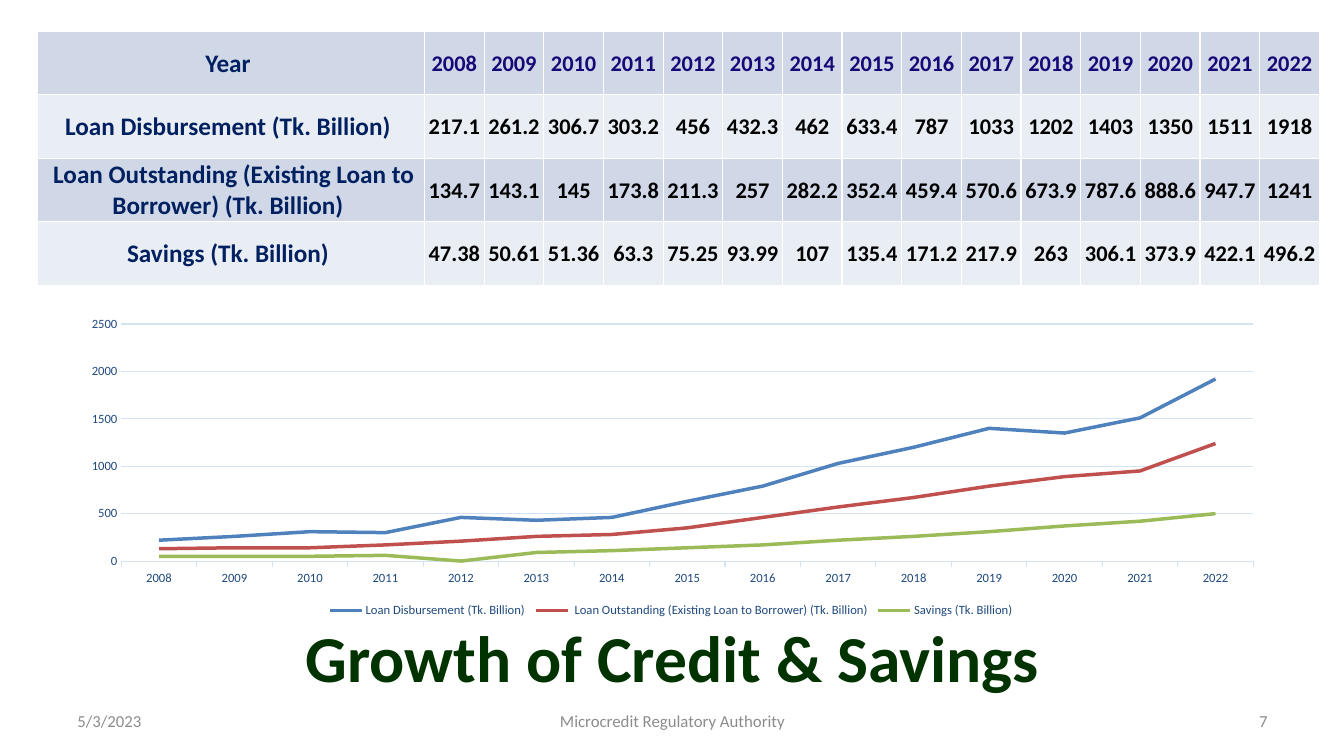
from lxml import etree
from pptx import Presentation
from pptx import util as u
from pptx.chart import data as chart_data
from pptx.dml.color import RGBColor
from pptx.enum import chart as chart_enum, text
from pptx.oxml import ns

FONT = "Calibri"
NAVY, BLUE, GRID, GREY = "002060", "1F497D", "D4E3F4", "8C8C8C"
BANDS = ["D0D8E8", "E9EDF4"]
CENTER = text.PP_ALIGN.CENTER
YEARS = [str(year) for year in range(2008, 2023)]
GROWTH = {
    "Loan Disbursement (Tk. Billion) ": [
        217.1, 261.2, 306.7, 303.2, 456, 432.3, 462, 633.4,
        787, 1033, 1202, 1403, 1350, 1511, 1918],
    " Loan Outstanding (Existing Loan to Borrower) (Tk. Billion) ": [
        134.7, 143.1, 145, 173.8, 211.3, 257, 282.2, 352.4,
        459.4, 570.6, 673.9, 787.6, 888.6, 947.7, 1241],
    "Savings (Tk. Billion) ": [
        47.38, 50.61, 51.36, 63.3, 75.25, 93.99, 107, 135.4,
        171.2, 217.9, 263, 306.1, 373.9, 422.1, 496.2],
}
LINE_COLORS = ["4F81BD", "C0504D", "9BBB59"]


def color(hex_value):
    """Turn a hex string into a colour."""
    return RGBColor.from_string(hex_value)


def style_font(font, size, hex_value, bold=False):
    """Set the face, size, colour and weight of a font."""
    font.name, font.size, font.bold = FONT, u.Pt(size), bold
    font.color.rgb = color(hex_value)


def style_line(line, hex_value, width):
    """Set the colour and width of a line."""
    line.color.rgb = color(hex_value)
    line.width = u.Pt(width)


def add_label(page, box, words, size, hex_value, align, bold=False, spacing=None):
    """Place one vertically centred line of text in a box."""
    frame = page.shapes.add_textbox(*map(u.Inches, box)).text_frame
    frame.word_wrap = True
    frame.vertical_anchor = text.MSO_ANCHOR.MIDDLE
    para = frame.paragraphs[0]
    para.text, para.alignment = words, align
    if spacing:
        para.line_spacing = spacing
    style_font(para.runs[0].font, size, hex_value, bold)


def add_borders(cell):
    """Draw white one-point borders on all sides of a cell."""
    for side in ("lnL", "lnR", "lnT", "lnB"):
        line = etree.SubElement(cell._tc.get_or_add_tcPr(), ns.qn(f"a:{side}"), w=str(u.Pt(1)))
        fill = etree.SubElement(line, ns.qn("a:solidFill"))
        etree.SubElement(fill, ns.qn("a:srgbClr"), val="FFFFFF")


def fill_cell(cell, words, size, hex_value, band):
    """Write and format one table cell."""
    cell.margin_left = cell.margin_right = cell.margin_top = u.Inches(0.01)
    cell.margin_bottom = 0
    cell.vertical_anchor = text.MSO_ANCHOR.MIDDLE
    add_borders(cell)
    cell.fill.solid()
    cell.fill.fore_color.rgb = color(band)
    para = cell.text_frame.paragraphs[0]
    para.text, para.alignment = words, CENTER
    style_font(para.runs[0].font, size, hex_value, True)


def add_growth_table(page, box):
    """Place the table of yearly figures in a box."""
    rows = [["Year ", *YEARS]] + [[name, *map(str, values)] for name, values in GROWTH.items()]
    table = page.shapes.add_table(len(rows), len(rows[0]), *map(u.Inches, box)).table
    label_width = 3.84
    year_width = (box[2] - label_width) / len(YEARS)
    for index, column in enumerate(table.columns):
        column.width = u.Inches(year_width if index else label_width)
    for row_index, row in enumerate(rows):
        figure_color = "000000" if row_index else "160977"
        for index, words in enumerate(row):
            size, hex_value = (16, figure_color) if index else (18, NAVY)
            fill_cell(table.cell(row_index, index), words, size, hex_value, BANDS[row_index % 2])


def add_growth_chart(page, box):
    """Place the line chart, in rounded figures, in a box."""
    data = chart_data.CategoryChartData()
    data.categories = YEARS
    for name, values in GROWTH.items():
        rounded = [round(value, -1) for value in values]
        if name.startswith("Savings"):
            rounded[YEARS.index("2012")] = 0
        data.add_series(name, rounded)
    chart = page.shapes.add_chart(
        chart_enum.XL_CHART_TYPE.LINE, *map(u.Inches, box), data).chart
    chart.has_title = False
    style_font(chart.font, 10, "000000")
    chart.has_legend = True
    chart.legend.position = chart_enum.XL_LEGEND_POSITION.BOTTOM
    chart.legend.include_in_layout = False
    style_font(chart.legend.font, 9, BLUE)
    chart.plots[0].vary_by_categories = False
    for series, hex_value in zip(chart.plots[0].series, LINE_COLORS):
        series.smooth = False
        series.marker.style = chart_enum.XL_MARKER_STYLE.NONE
        style_line(series.format.line, hex_value, 2.5)
    years, amounts = chart.category_axis, chart.value_axis
    for axis in (years, amounts):
        style_font(axis.tick_labels.font, 9, BLUE)
    years.major_tick_mark = chart_enum.XL_TICK_MARK.OUTSIDE
    style_line(years.format.line, GRID, 0.75)
    amounts.major_tick_mark = chart_enum.XL_TICK_MARK.NONE
    amounts.minimum_scale, amounts.maximum_scale, amounts.major_unit = 0, 2500, 500
    amounts.format.line.fill.background()
    amounts.has_major_gridlines = True
    style_line(amounts.major_gridlines.format.line, GRID, 0.75)


def add_footer(page, box):
    """Place the date, organisation and page number along a box."""
    left, top, width, height = box
    side, middle = 3.11, 4.22
    parts = [
        ("5/3/2023", left, side, text.PP_ALIGN.LEFT),
        ("Microcredit Regulatory Authority", left + (width - middle) / 2, middle, CENTER),
        ("7", left + width - side, side, text.PP_ALIGN.RIGHT),
    ]
    for words, start, part_width, align in parts:
        add_label(page, (start, top, part_width, height), words, 12, GREY, align)


def main():
    """Build and save the slide."""
    deck = Presentation()
    deck.slide_width, deck.slide_height = u.Inches(13.33), u.Inches(7.5)
    page = deck.slides.add_slide(deck.slide_layouts[6])
    add_growth_table(page, (0.37, 0.31, 12.72, 2.52))
    add_label(page, (0.92, 6.23, 11.5, 0.66), "Growth of Credit & Savings",
              46.8, "003300", CENTER, True, 0.9)
    add_footer(page, (0.67, 6.95, 12, 0.4))
    add_growth_chart(page, (0.67, 3.08, 12, 3.09))
    deck.save("out.pptx")


if __name__ == "__main__":
    main()
